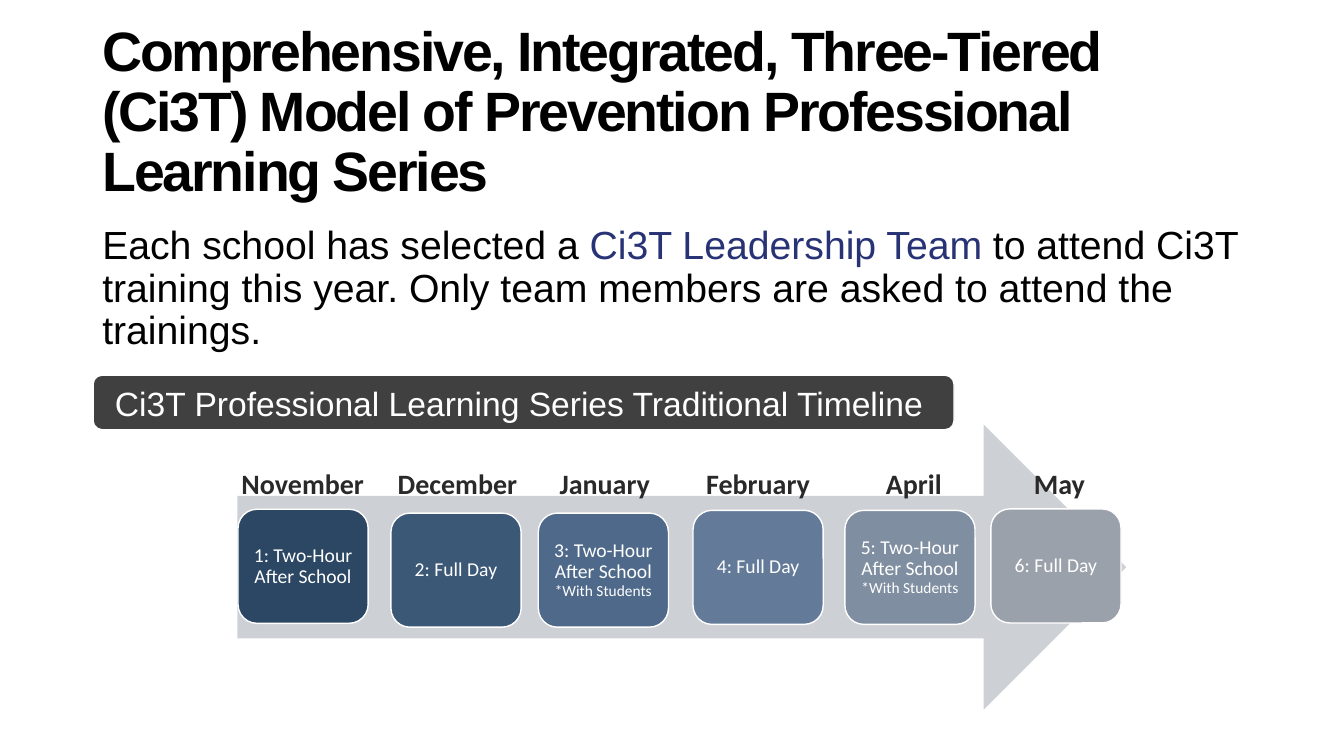
from pptx import Presentation
from pptx.dml.color import RGBColor
from pptx.enum import shapes, text
from pptx.util import Pt

BLACK = RGBColor(0x00, 0x00, 0x00)
WHITE = RGBColor(0xFF, 0xFF, 0xFF)
NAVY = RGBColor(0x28, 0x33, 0x75)
BANNER_GREY = RGBColor(0x40, 0x40, 0x40)
ARROW_GREY = RGBColor(0xCD, 0xD0, 0xD4)
MONTH_GREY = RGBColor(0x29, 0x29, 0x29)

# Month, label left, label width, card left, card top, card fill, card lines
SESSIONS = [
    ("November", 172, 88.5, 170, 363.75, RGBColor(0x2B, 0x47, 0x63),
     ["1: Two-Hour", "After School"]),
    ("December", 283.5, 86.5, 279.25, 366.5, RGBColor(0x3B, 0x58, 0x77),
     ["2: Full Day"]),
    ("January", 399.5, 65, 384.5, 366.5, RGBColor(0x4E, 0x69, 0x89),
     ["3: Two-Hour", "After School", "*With Students"]),
    ("February", 504, 75, 495, 364.5, RGBColor(0x63, 0x7B, 0x99),
     ["4: Full Day"]),
    ("April", 623.5, 58.5, 603.5, 364.5, RGBColor(0x80, 0x8E, 0xA1),
     ["5: Two-Hour", "After School", "*With Students"]),
    ("May", 738, 37.5, 707.75, 363.5, RGBColor(0x9B, 0xA1, 0xAB),
     ["6: Full Day"]),
]


def style(font, size, color, name="Arial", bold=False):
    font.name, font.size, font.bold = name, Pt(size), bold
    font.color.rgb = color


def set_frame(tf, anchor, side=7.2, top=3.6, wrap=True):
    tf.word_wrap = wrap
    tf.vertical_anchor = anchor
    tf.margin_left = tf.margin_right = Pt(side)
    tf.margin_top = tf.margin_bottom = Pt(top)


def add_text(s, box, anchor=text.MSO_ANCHOR.TOP, **frame):
    """Add an empty text box and return its first paragraph."""
    tf = s.shapes.add_textbox(*map(Pt, box)).text_frame
    set_frame(tf, anchor, **frame)
    return tf.paragraphs[0]


def add_block(s, kind, box, fill, outlined=True):
    sp = s.shapes.add_shape(kind, *map(Pt, box))
    sp.shadow.inherit = False
    sp.fill.solid()
    sp.fill.fore_color.rgb = fill
    if outlined:
        sp.line.color.rgb = WHITE
        sp.line.width = Pt(1)
    else:
        sp.line.fill.background()
    return sp


def add_card(s, left, top, fill, lines):
    sp = add_block(s, shapes.MSO_SHAPE.ROUNDED_RECTANGLE,
                   (left, top, 93, 81.5), fill)
    tf = sp.text_frame
    set_frame(tf, text.MSO_ANCHOR.MIDDLE, side=4.3, top=4.3)
    for i, line in enumerate(lines):
        p = tf.add_paragraph() if i else tf.paragraphs[0]
        p.text = line
        p.alignment = text.PP_ALIGN.CENTER
        p.line_spacing = 0.9
        style(p.font, 11 if line.startswith("*") else 14, WHITE, "Calibri")


def add_month(s, left, width, month):
    p = add_text(s, (left, 329.75, width, 31.5), side=0, wrap=False)
    p.text = month
    p.alignment = text.PP_ALIGN.CENTER
    style(p.font, 20, MONTH_GREY, "Calibri", True)


def main():
    prs = Presentation()
    prs.slide_width, prs.slide_height = Pt(960), Pt(540)
    s = prs.slides.add_slide(prs.slide_layouts[6])

    # Title, with tightened letter spacing
    p = add_text(s, (66, 28.75, 828, 104.5), text.MSO_ANCHOR.MIDDLE)
    r = p.add_run()
    r.text = ("Comprehensive, Integrated, Three-Tiered (Ci3T) Model of "
              "Prevention Professional Learning Series")
    r._r.get_or_add_rPr().set("spc", "-150")
    p.line_spacing = 0.9
    style(p.font, 39.6, BLACK, bold=True)

    # Introduction
    p = add_text(s, (66, 157.75, 828, 329))
    p.line_spacing = 0.9
    style(p.font, 28, BLACK)
    for words, color in [
        ("Each school has selected a ", BLACK),
        ("Ci3T Leadership Team ", NAVY),
        ("to attend Ci3T training this year. Only team members are asked "
         "to attend the trainings.", BLACK),
    ]:
        r = p.add_run()
        r.text = words
        r.font.color.rgb = color

    # Timeline banner
    sp = add_block(s, shapes.MSO_SHAPE.ROUNDED_RECTANGLE,
                   (66.5, 268, 615, 39), BANNER_GREY)
    set_frame(sp.text_frame, text.MSO_ANCHOR.TOP)
    p = sp.text_frame.paragraphs[0]
    p.text = "Ci3T Professional Learning Series Traditional Timeline "
    p.alignment = text.PP_ALIGN.CENTER
    style(p.font, 24, WHITE)

    # Arrow with session cards, and months above
    add_block(s, shapes.MSO_SHAPE.RIGHT_ARROW, (169.5, 303.25, 635, 203.75),
              ARROW_GREY, outlined=False)
    for month, label_left, label_width, left, top, fill, lines in SESSIONS:
        add_card(s, left, top, fill, lines)
        add_month(s, label_left, label_width, month)

    prs.save("out.pptx")


if __name__ == "__main__":
    main()
